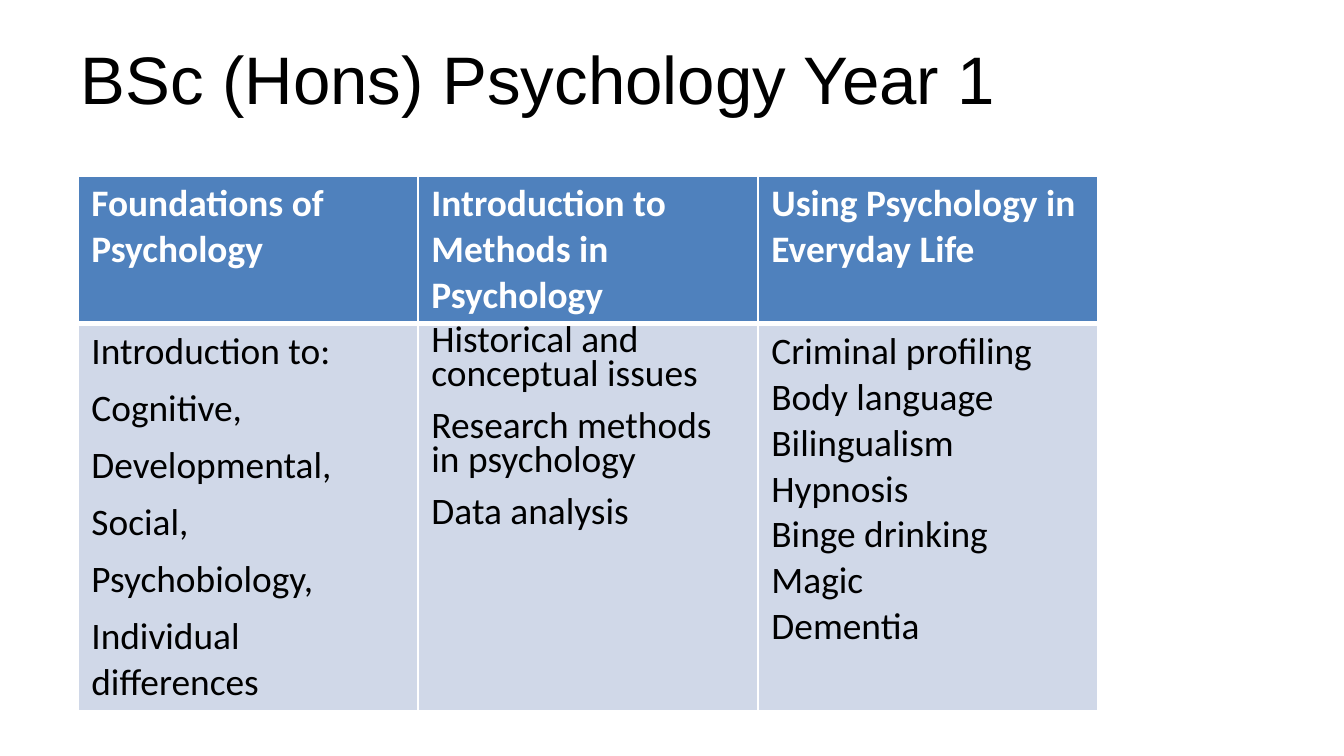
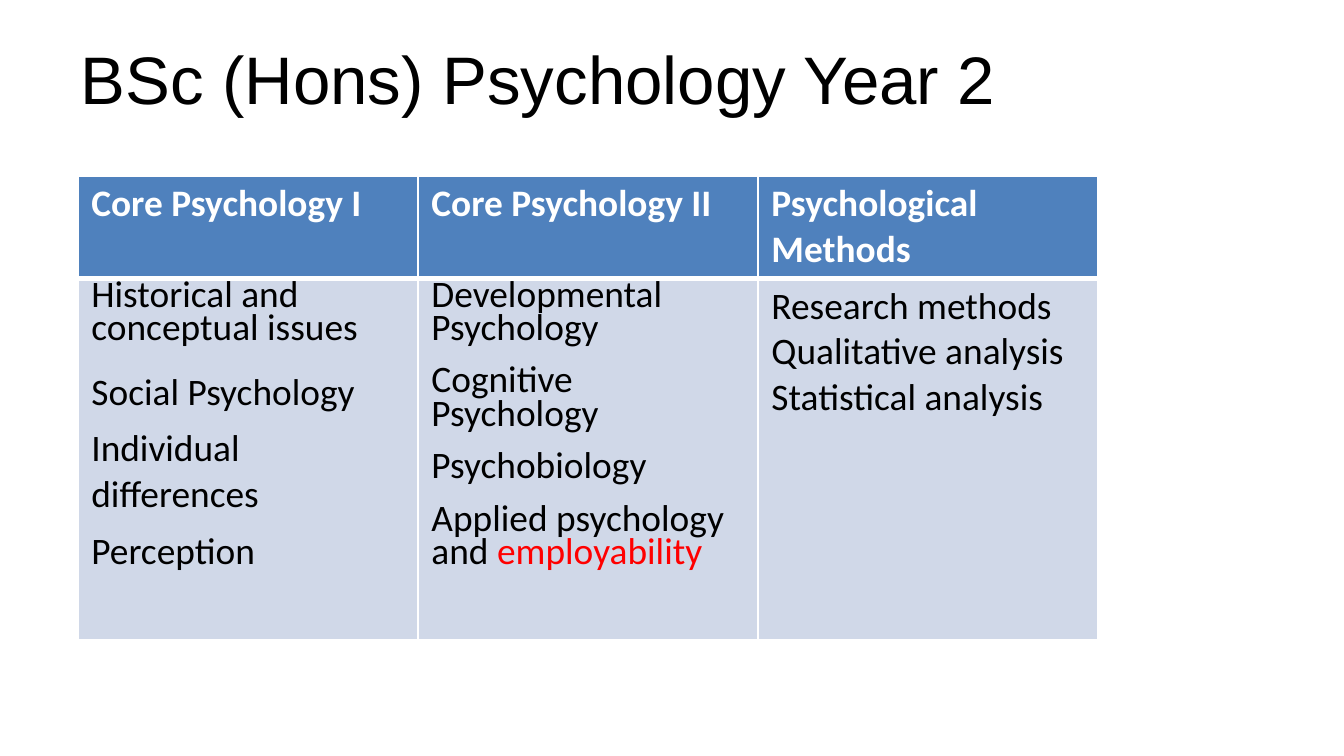
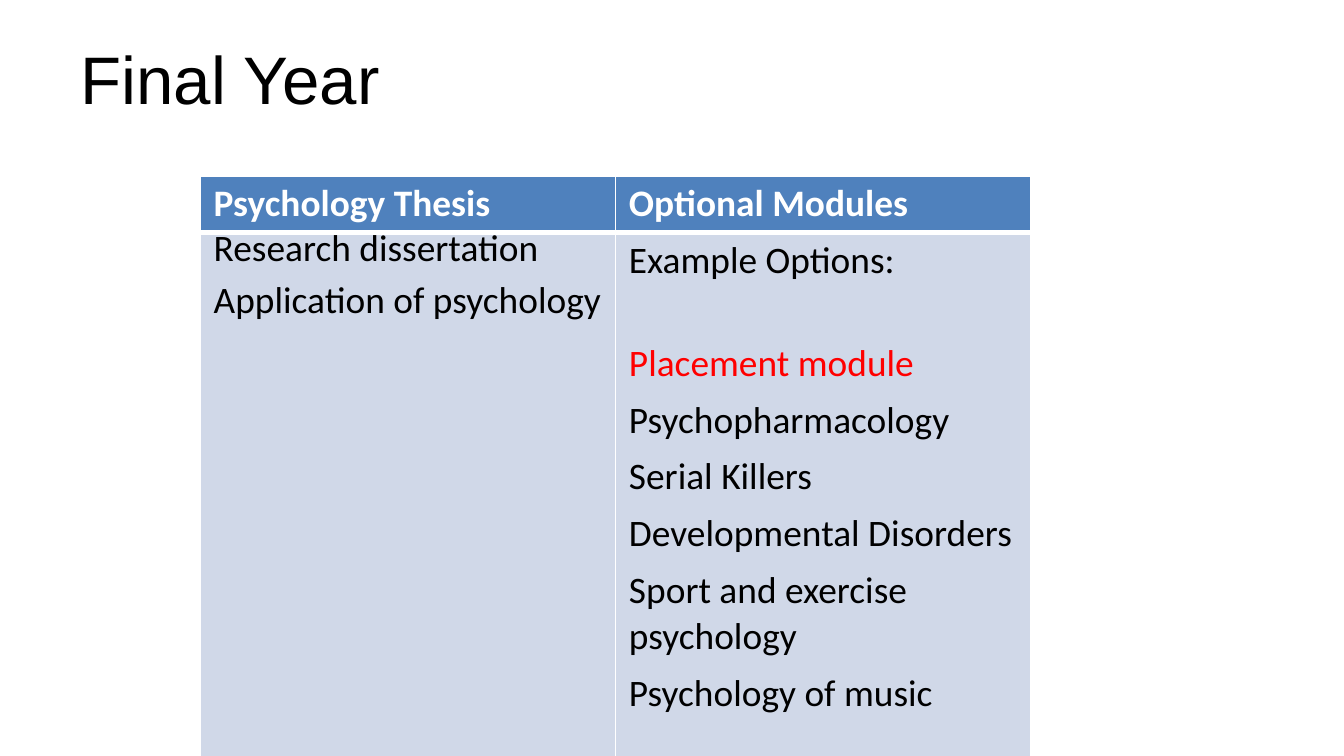
from lxml.etree import SubElement as Sub
from pptx import Presentation
from pptx.dml.color import RGBColor as Rgb
from pptx.enum.text import MSO_ANCHOR as Anchor, PP_ALIGN as Align
from pptx.oxml.ns import qn
from pptx.util import Inches, Pt

BLACK, WHITE, RED = "000000", "FFFFFF", "FF0000"
BLUE, PALE = "4F81BD", "D0D8E8"
PLAIN = {}
LOOSE = {"after": 6}
TIGHT = {"after": 10, "pitch": 18}
GAP = {"after": 30.5}


def color(code):
    return Rgb.from_string(code)


def add_run(para, text, size, face, code, bold=False):
    run = para.add_run()
    run.text = text
    font = run.font
    font.size, font.name, font.bold = Pt(size), face, bold
    font.color.rgb = color(code)


def lines(style, *texts):
    return [(style, [(text, BLACK)]) for text in texts]


def add_title(slide, text):
    title = slide.shapes.title
    title.left, title.top = Inches(0.5), Inches(0.23)
    title.width, title.height = Inches(9), Inches(0.94)
    frame = title.text_frame
    frame.word_wrap = True
    frame.vertical_anchor = Anchor.TOP
    frame.margin_left = frame.margin_right = Inches(0.1)
    frame.margin_top = frame.margin_bottom = Inches(0.05)
    para = frame.paragraphs[0]
    para.alignment = Align.LEFT
    add_run(para, text, 36, "Arial", BLACK)


def add_edges(cell, top, base):
    props = cell._tc.get_or_add_tcPr()
    for side, width in (("L", 1), ("R", 1), ("T", top), ("B", base)):
        edge = Sub(props, qn(f"a:ln{side}"), w=str(Pt(width)))
        fill = Sub(edge, qn("a:solidFill"))
        Sub(fill, qn("a:srgbClr"), val=WHITE)


def fill_cell(cell, paras, back, bold, top, base):
    add_edges(cell, top, base)
    cell.fill.solid()
    cell.fill.fore_color.rgb = color(back)
    cell.margin_left = cell.margin_right = Inches(0.1)
    cell.margin_top = cell.margin_bottom = Inches(0.04)
    frame = cell.text_frame
    for i, (style, runs) in enumerate(paras):
        para = frame.add_paragraph() if i else frame.paragraphs[0]
        para.space_after = Pt(style.get("after", 0))
        if "pitch" in style:
            para.line_spacing = Pt(style["pitch"])
        for text, code in runs:
            add_run(para, text, 20, "Calibri", code, bold)


def add_grid(slide, left, width, heights, heads, bodies):
    count = len(heads)
    grid = slide.shapes.add_table(
        2, count, Inches(left), Inches(1.31),
        Inches(width * count), Inches(sum(heights))).table
    for row, height in zip(grid.rows, heights):
        row.height = Inches(height)
    for i, (head, body) in enumerate(zip(heads, bodies)):
        grid.columns[i].width = Inches(width)
        fill_cell(grid.cell(0, i), [(PLAIN, [(head, WHITE)])], BLUE, True, 1, 3)
        fill_cell(grid.cell(1, i), body, PALE, False, 3, 1)


def add_year(deck, title, *grid):
    slide = deck.slides.add_slide(deck.slide_layouts[5])
    add_title(slide, title)
    add_grid(slide, *grid)


def main():
    deck = Presentation()
    deck.slide_width = Inches(10)
    deck.slide_height = deck.slide_width * 9 // 16

    add_year(
        deck, "BSc (Hons) Psychology Year 1", 0.58, 2.53, (1.08, 2.82),
        ["Foundations of Psychology", "Introduction to Methods in Psychology",
         "Using Psychology in Everyday Life"],
        [lines(LOOSE, "Introduction to:", "Cognitive,", "Developmental,",
               "Social,", "Psychobiology,", "Individual differences"),
         lines(TIGHT, "Historical and conceptual issues",
               "Research methods in psychology", "Data analysis"),
         lines(PLAIN, "Criminal profiling", "Body language", "Bilingualism",
               "Hypnosis", "Binge drinking", "Magic", "Dementia")])

    add_year(
        deck, "BSc (Hons) Psychology Year 2", 0.58, 2.53, (0.74, 2.69),
        ["Core Psychology I", "Core Psychology II", "Psychological Methods"],
        [lines(TIGHT, "Historical and conceptual issues")
         + lines(LOOSE, "Social Psychology", "Individual differences",
                 "Perception"),
         lines(TIGHT, "Developmental Psychology", "Cognitive Psychology",
               "Psychobiology")
         + [(TIGHT, [("Applied psychology and ", BLACK),
                     ("employability", RED)])],
         lines(PLAIN, "Research methods", "Qualitative analysis",
               "Statistical analysis")])

    add_year(
        deck, "Final Year", 1.49, 3.09, (0.41, 3.91),
        ["Psychology Thesis", "Optional Modules"],
        [lines(TIGHT, "Research dissertation", "Application of psychology"),
         lines(GAP, "Example Options:")
         + [(LOOSE, [("Placement module", RED)])]
         + lines(LOOSE, "Psychopharmacology", "Serial Killers",
                 "Developmental Disorders", "Sport and exercise psychology",
                 "Psychology of music")])

    deck.save("out.pptx")


if __name__ == "__main__":
    main()
